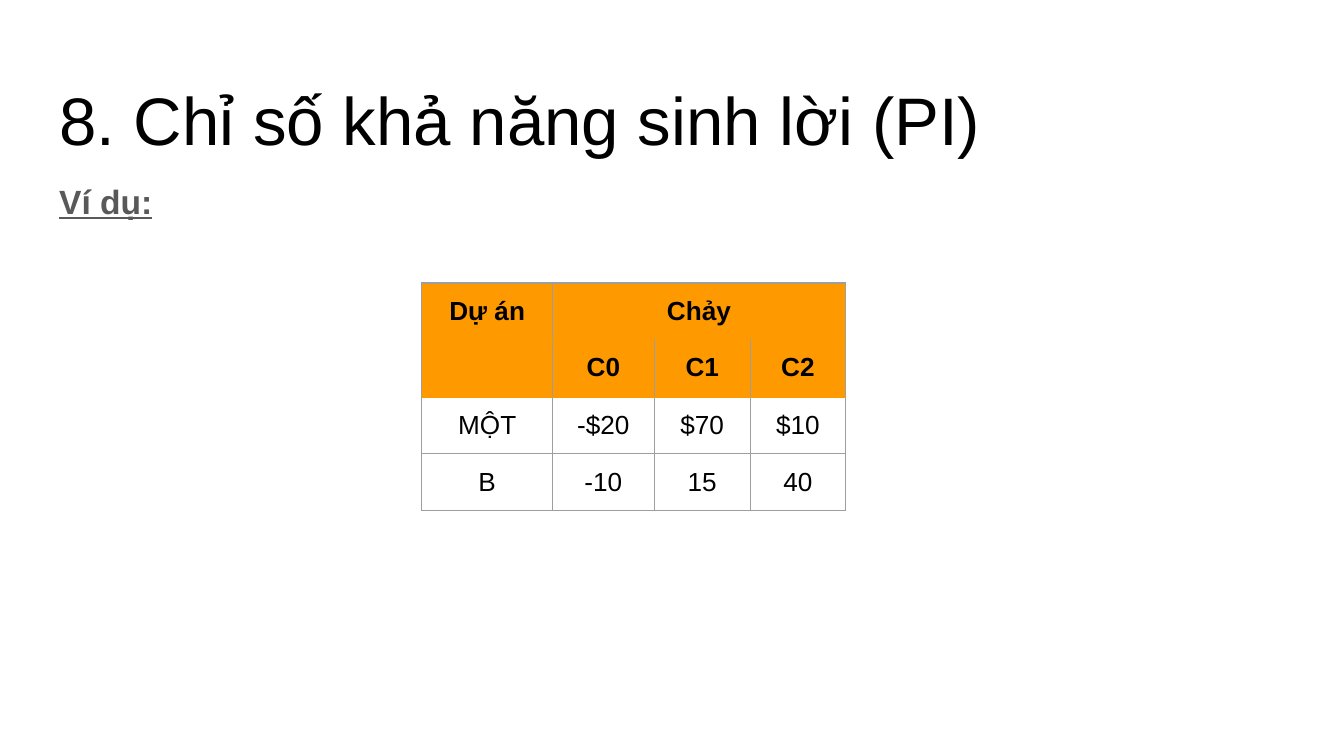
from dataclasses import dataclass

from pptx import Presentation
from pptx.dml.color import RGBColor as RGB
from pptx.enum.text import MSO_ANCHOR as Anchor, MSO_AUTO_SIZE as Fit, PP_ALIGN as Align
from pptx.oxml.xmlchemy import OxmlElement as Node
from pptx.util import Pt


@dataclass(frozen=True)
class Theme:
    face: str = "Arial"
    ink: str = "000000"
    soft: str = "595959"
    head: str = "FF9900"
    page: str = "FFFFFF"
    rule: str = "9E9E9E"
    title: int = 36
    body: int = 18
    cell: int = 14
    inset: float = 7.2


THEME = Theme()
HEADS = 2
COLS = (70, 54.5, 51.5, 51)
ROWS = (30.2, 31.2, 30.2, 30.2)
DATA = (
    ("Dự án", "Chảy", "", ""),
    ("", "C0", "C1", "C2"),
    ("MỘT", "-$20", "$70", "$10"),
    ("B", "-10", "15", "40"),
)
SPANS = (((0, 0), (1, 0)), ((0, 1), (0, 3)))


def put(item, values):
    for name, value in values.items():
        setattr(item, name, value)


def write(para, text, size, color, **style):
    run = para.add_run()
    run.text = text
    put(run.font, dict(name=THEME.face, size=Pt(size), **style))
    run.font.color.rgb = RGB.from_string(color)


def fill_holder(holder, box, text, size, color, align=Align.LEFT, space=1.0, **style):
    """Move a placeholder to box and give it one plain paragraph."""
    put(holder, dict(zip(("left", "top", "width", "height"), map(Pt, box))))
    frame = holder.text_frame
    put(frame, dict(word_wrap=True, auto_size=Fit.NONE, vertical_anchor=Anchor.TOP))
    for side in ("left", "top", "right", "bottom"):
        setattr(frame, f"margin_{side}", Pt(THEME.inset))
    para = frame.paragraphs[0]
    put(para, dict(alignment=align, line_spacing=space, space_before=Pt(0)))
    props = para._p.get_or_add_pPr()
    props.set("marL", "0")
    props.set("indent", "0")
    props.append(Node("a:buNone"))
    write(para, text, size, color, **style)


def edge(cell, side, color):
    line = Node(f"a:{side}")
    line.set("w", str(Pt(0.75)))
    fill, tone = Node("a:solidFill"), Node("a:srgbClr")
    tone.set("val", color)
    fill.append(tone)
    line.append(fill)
    cell._tc.get_or_add_tcPr().append(line)


def style_cell(cell, text, row):
    head = row < HEADS
    for side in ("lnL", "lnR", "lnT", "lnB"):
        inner = (side == "lnB" and head) or (side == "lnT" and 0 < row <= HEADS)
        edge(cell, side, THEME.head if inner else THEME.rule)
    cell.fill.solid()
    cell.fill.fore_color.rgb = RGB.from_string(THEME.head if head else THEME.page)
    for side in ("left", "top", "right", "bottom"):
        setattr(cell, f"margin_{side}", Pt(THEME.inset))
    cell.vertical_anchor = Anchor.TOP
    para = cell.text_frame.paragraphs[0]
    para.alignment = Align.CENTER
    if text:
        write(para, text, THEME.cell, THEME.ink, bold=head)


def add_flows(slide, left, top):
    """Place the cash flow table with its corner at left, top."""
    box = map(Pt, (left, top, sum(COLS), sum(ROWS)))
    table = slide.shapes.add_table(len(ROWS), len(COLS), *box).table
    put(table, dict(first_row=False, horz_banding=False))
    for col, width in zip(table.columns, COLS):
        col.width = Pt(width)
    for row, height in zip(table.rows, ROWS):
        row.height = Pt(height)
    for r, texts in enumerate(DATA):
        for c, text in enumerate(texts):
            style_cell(table.cell(r, c), text, r)
    for start, end in SPANS:
        table.cell(*start).merge(table.cell(*end))


def main():
    deck = Presentation()
    put(deck, dict(slide_width=Pt(720), slide_height=Pt(405)))
    slide = deck.slides.add_slide(deck.slide_layouts[1])
    title, body = slide.placeholders
    fill_holder(title, (24.5, 35, 671, 45.5), "8. Chỉ số khả năng sinh lời (PI)",
                THEME.title, THEME.ink)
    fill_holder(body, (24.5, 86.4, 671, 29), "Ví dụ:", THEME.body, THEME.soft,
                space=1.15, bold=True, underline=True)
    add_flows(slide, 226, 151.6)
    deck.save("out.pptx")


if __name__ == "__main__":
    main()
